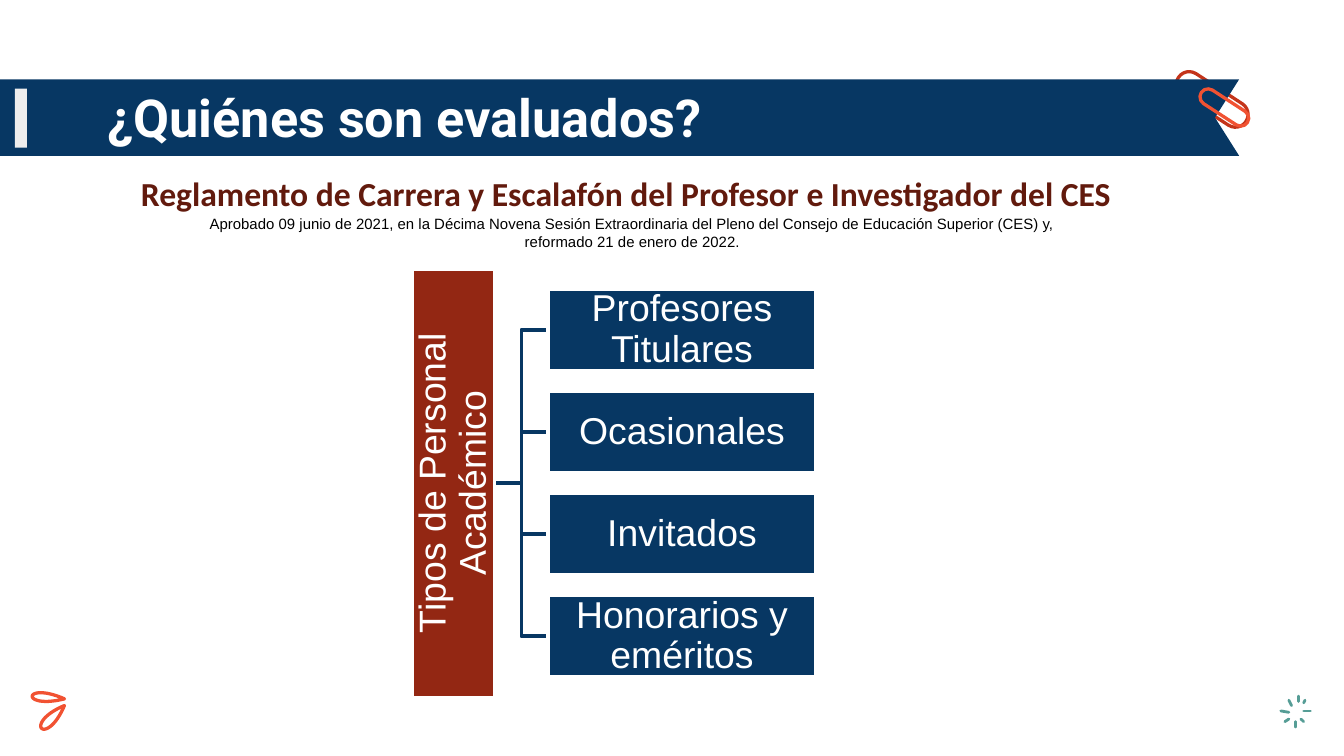
from lxml import etree
from pptx import Presentation
from pptx import util as u
from pptx.dml import color
from pptx.enum import shapes, text
from pptx.oxml import ns

NAVY, RED, MAROON = "073763", "932713", "621A0D"
ORANGE, RUST, TEAL = "F15232", "C4341A", "569D96"
WHITE, GRAY, BLACK = "FFFFFF", "EEEEEE", "000000"


def rgb(value):
    """Turn a hex string into a colour."""
    return color.RGBColor.from_string(value)


def paint(shape, fill=None, line=None, weight=2):
    """Give a shape its fill and outline, without a shadow."""
    shape.shadow.inherit = False
    if fill:
        shape.fill.solid()
        shape.fill.fore_color.rgb = rgb(fill)
    else:
        shape.fill.background()
    if line:
        shape.line.color.rgb = rgb(line)
        shape.line.width = u.Pt(weight)
    else:
        shape.line.fill.background()


def write(shape, words, font, size, ink, bold=False, inset=0.1,
          align=text.PP_ALIGN.CENTER, anchor=text.MSO_ANCHOR.MIDDLE):
    """Set one paragraph of text in a shape and return the paragraph."""
    frame = shape.text_frame
    frame.text = words
    frame.word_wrap = True
    frame.auto_size = text.MSO_AUTO_SIZE.NONE
    frame.vertical_anchor = anchor
    frame.margin_left = frame.margin_right = u.Inches(inset)
    frame.margin_top = frame.margin_bottom = u.Inches(inset)
    para = frame.paragraphs[0]
    para.alignment = align
    for span in para.runs:
        span.font.name, span.font.size, span.font.bold = font, u.Pt(size), bold
        span.font.color.rgb = rgb(ink)
    return para


def add_box(page, box, fill, line=None):
    """Add a filled rectangle."""
    shape = page.shapes.add_shape(shapes.MSO_SHAPE.RECTANGLE, *map(u.Inches, box))
    paint(shape, fill, line)
    return shape


def add_outline(page, points):
    """Add a closed freeform through points given in inches."""
    start, *rest = [(u.Inches(x), u.Inches(y)) for x, y in points]
    builder = page.shapes.build_freeform(*start)
    builder.add_line_segments(rest, close=True)
    return builder.convert_to_shape()


def add_link(page, kind, points, ink, weight):
    """Add a connector without a shadow."""
    link = page.shapes.add_connector(kind, *map(u.Inches, points))
    link.line.color.rgb = rgb(ink)
    link.line.width = u.Pt(weight)
    etree.SubElement(link._element.spPr, ns.qn("a:effectLst"))
    return link


def add_clip(page, center, length, thickness, ink):
    """Add one tilted loop of the paper clip."""
    x, y = center
    box = x - length / 2, y - thickness / 2, length, thickness
    loop = page.shapes.add_shape(shapes.MSO_SHAPE.ROUNDED_RECTANGLE, *map(u.Inches, box))
    loop.adjustments[0] = 0.5
    loop.rotation = 33
    paint(loop, line=ink, weight=1.75)
    return loop


def add_banner(page, box, words):
    """Add the notched banner with its paper clip and, in front, the title."""
    x, y, w, h = box
    add_clip(page, (x + 9.02, y + 0.15), 0.6, 0.19, RUST)
    ribbon = add_outline(page, [(x, y), (x, y + h), (x + w, y + h),
                                (x + w - 0.18, y + h / 2), (x + w, y)])
    paint(ribbon, NAVY)
    add_box(page, (x + 0.11, y + 0.07, 0.09, 0.44), GRAY)
    front = add_clip(page, (x + 9.11, y + 0.21), 0.41, 0.12, ORANGE)
    title = page.shapes.title
    title.left, title.top = u.Inches(x + 0.7), u.Inches(y + 0.02)
    title.width, title.height = u.Inches(8.44), u.Inches(0.52)
    write(title, words, "Roboto", 28, WHITE, True, align=text.PP_ALIGN.LEFT)
    front._element.addnext(title._element)


def add_heading(page, box, heading, note):
    """Add the heading and the approval note under it."""
    x, y, w, h = box
    top = text.MSO_ANCHOR.TOP
    label = page.shapes.add_textbox(*map(u.Inches, (x, y, w, 0.45)))
    write(label, heading, "Calibri", 18, MAROON, True, anchor=top)
    label = page.shapes.add_textbox(*map(u.Inches, (x + 1.37, y + h - 0.37, 6.51, 0.37)))
    write(label, note, "Arial", 8, BLACK, inset=0.05, anchor=top)


def add_tree(page, box, root, branches):
    """Add a vertical root box joined to a column of evenly spaced branches."""
    x, y, w, h = box
    thickness, width, pitch = 0.61, 1.99, 0.76
    inset_y = (h - pitch * (len(branches) - 1) - thickness) / 2
    trunk = add_box(page, (x, y, thickness, h), RED, WHITE)
    write(trunk, root, "Arial", 20, WHITE, inset=0.01).line_spacing = 0.9
    trunk.text_frame._txBody.bodyPr.set("vert", "vert270")
    for row, words in enumerate(branches):
        leaf = add_box(page, (x + w - width, y + inset_y + row * pitch, width, thickness),
                       NAVY, WHITE)
        write(leaf, words, "Arial", 20, WHITE, inset=0.01).line_spacing = 0.9
        link = add_link(page, shapes.MSO_CONNECTOR.ELBOW, (0, 0, 1, 1), NAVY, 2)
        link.begin_connect(trunk, 3)
        link.end_connect(leaf, 1)
        trunk._element.addprevious(link._element)


def add_petals(page, box):
    """Add two petals, each a cubic loop that leaves and returns to its tip."""
    x, y = box[:2]
    petals = [((0.26, 0.06), (-0.24, -0.02), 0.11), ((0.26, 0.11), (-0.17, 0.17), 0.13)]
    for (tip_x, tip_y), (reach_x, reach_y), spread in petals:
        length = (reach_x ** 2 + reach_y ** 2) ** 0.5
        points = []
        for step in range(32):
            t = step / 32
            along = 4 * t * (1 - t)
            across = 3 * t * (1 - t) * (1 - 2 * t) * spread / length
            points.append((x + tip_x + along * reach_x - across * reach_y,
                           y + tip_y + along * reach_y + across * reach_x))
        paint(add_outline(page, points), line=ORANGE, weight=1.75)


def add_spark(page, box):
    """Add the ring of short round-ended rays."""
    x, y = box[:2]
    rays = [(0.14, 0.01, 0.14, 0.05), (0.07, 0.04, 0.09, 0.08), (0.01, 0.12, 0.07, 0.13),
            (0.04, 0.2, 0.07, 0.18), (0.12, 0.2, 0.12, 0.24), (0.16, 0.18, 0.18, 0.2),
            (0.18, 0.12, 0.23, 0.12), (0.19, 0.04, 0.18, 0.06)]
    for x1, y1, x2, y2 in rays:
        ray = add_link(page, shapes.MSO_CONNECTOR.STRAIGHT,
                       (x + x1, y + y1, x + x2, y + y2), TEAL, 1.5)
        ray.line._get_or_add_ln().set("cap", "rnd")


def main():
    """Build the slide and save it."""
    deck = Presentation()
    deck.slide_width = u.Inches(10)
    deck.slide_height = deck.slide_width * 9 // 16
    page = deck.slides.add_slide(deck.slide_layouts[5])
    add_banner(page, (0, 0.59, 9.22, 0.57), "¿Quiénes son evaluados?")
    add_heading(page, (0.08, 1.19, 9.16, 0.73),
                "Reglamento de Carrera y Escalafón del Profesor e Investigador del CES",
                "Aprobado 09 junio de 2021, en la Décima Novena Sesión Extraordinaria del Pleno "
                "del Consejo de Educación Superior (CES) y, reformado 21 de enero de 2022.")
    add_tree(page, (3.07, 2, 3, 3.19), "Tipos de Personal Académico",
             ["Profesores Titulares", "Ocasionales", "Invitados", "Honorarios y eméritos"])
    add_petals(page, (0.22, 5.14, 0.28, 0.3))
    add_spark(page, (9.52, 5.17, 0.24, 0.25))
    deck.save("out.pptx")


if __name__ == "__main__":
    main()
